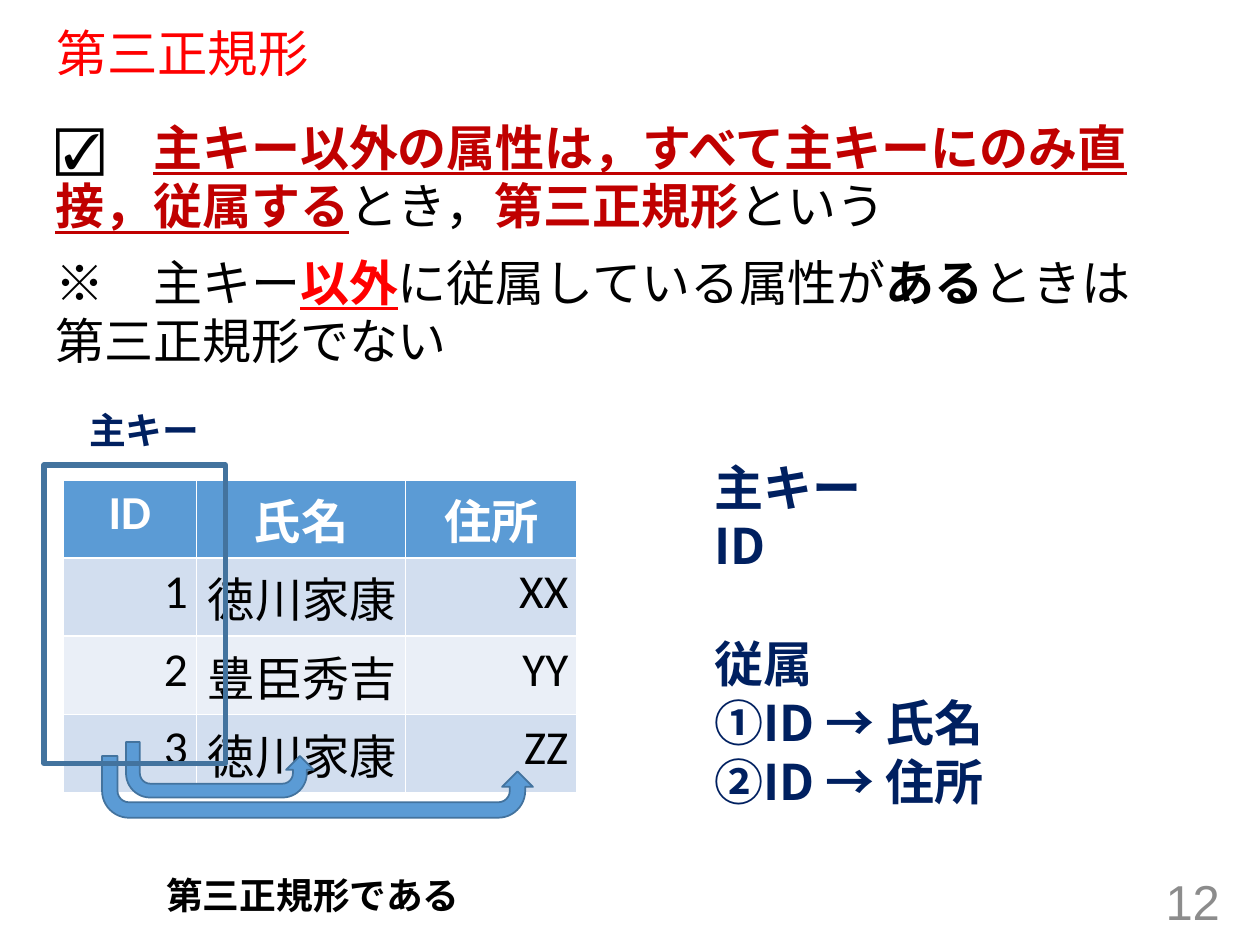
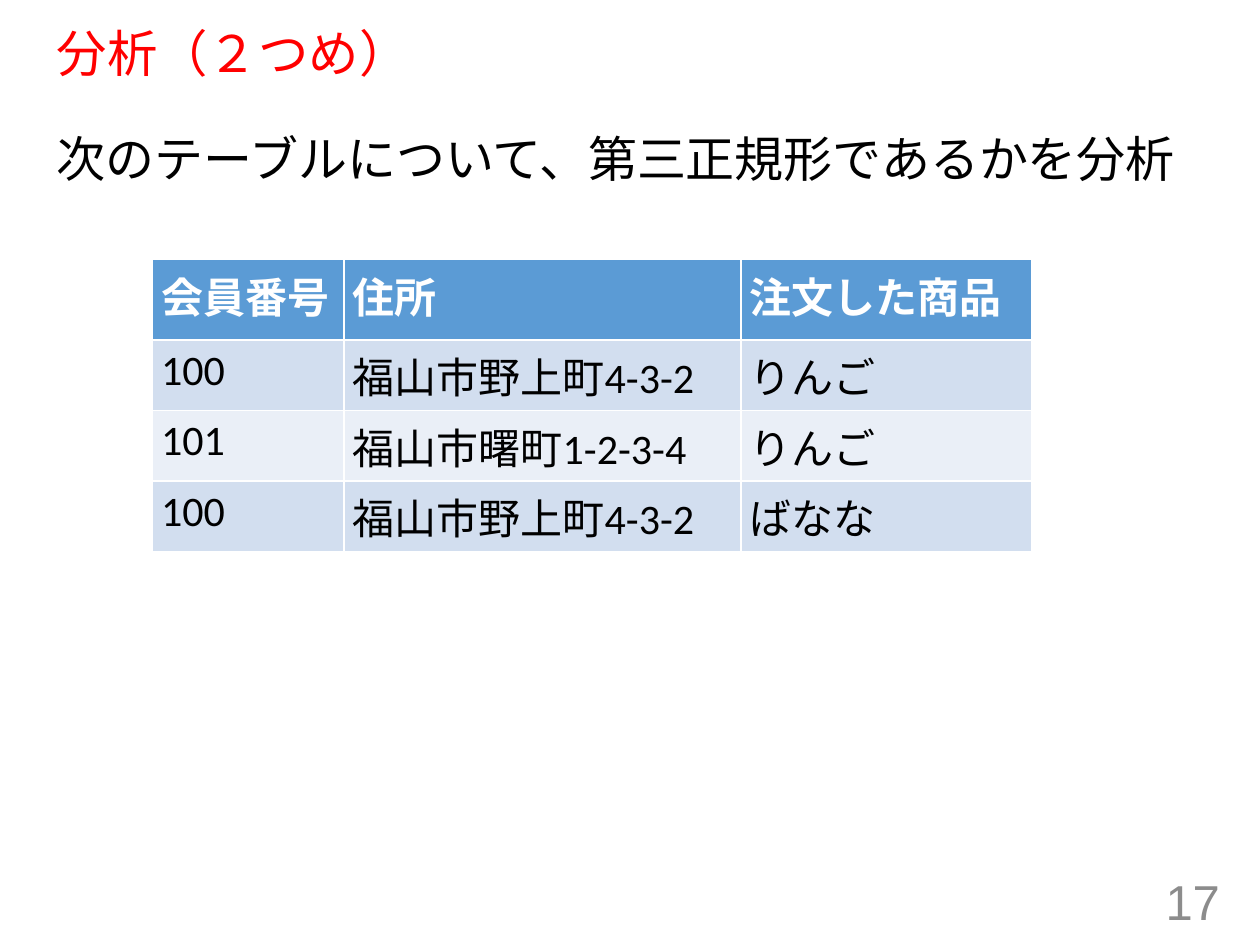
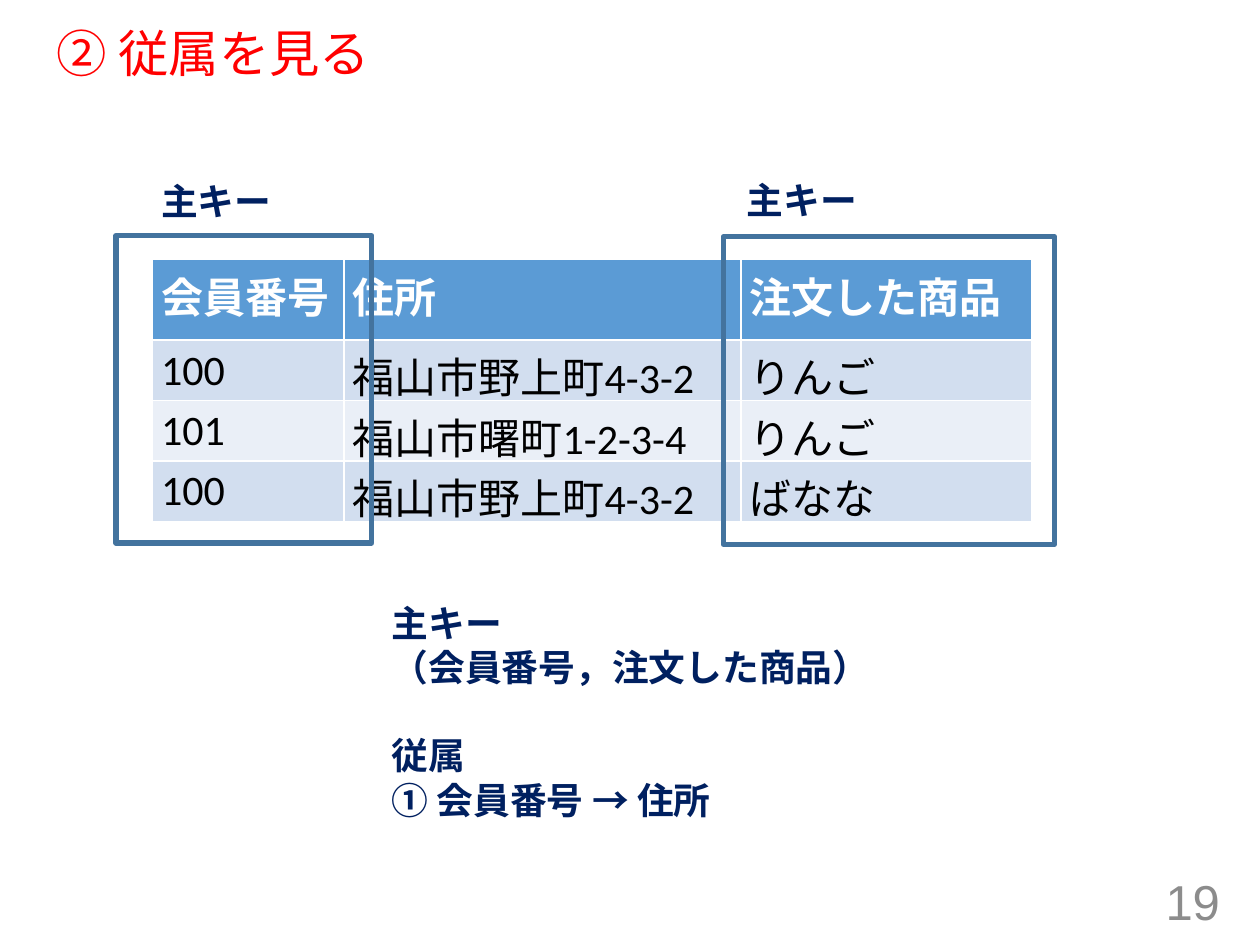
from lxml.etree import SubElement
from pptx import Presentation
from pptx.dml.color import RGBColor
from pptx.enum.lang import MSO_LANGUAGE_ID
from pptx.enum.shapes import MSO_SHAPE
from pptx.enum.text import MSO_ANCHOR, MSO_AUTO_SIZE, PP_ALIGN
from pptx.oxml.ns import qn
from pptx.util import Inches, Pt

RED = RGBColor(0xFF, 0x00, 0x00)
DARK_RED = RGBColor(0xC0, 0x00, 0x00)
NAVY = RGBColor(0x00, 0x20, 0x60)
BLACK = RGBColor(0x00, 0x00, 0x00)
WHITE = RGBColor(0xFF, 0xFF, 0xFF)
GRAY = RGBColor(0x8C, 0x8C, 0x8C)
BLUE = RGBColor(0x5B, 0x9B, 0xD5)
BLUE_LINE = RGBColor(0x43, 0x73, 0x9E)
ROW_FILLS = (RGBColor(0xD2, 0xDE, 0xEF), RGBColor(0xEA, 0xEF, 0xF7))

JP_FONT = "Noto Sans CJK JP"
LINE_RATIO = 1.2
TITLE_ONLY, TITLE_AND_BODY = 5, 1

PEOPLE = [("ID", "氏名", "住所"),
          ("1", "徳川家康", "XX"),
          ("2", "豊臣秀吉", "YY"),
          ("3", "徳川家康", "ZZ")]
ORDERS = [("会員番号", "住所", "注文した商品"),
          ("100", "福山市野上町4-3-2", "りんご"),
          ("101", "福山市曙町1-2-3-4", "りんご"),
          ("100", "福山市野上町4-3-2", "ばなな")]
ORDER_COLS = (1.52, 3.15, 2.31)


def add_run(p, text, size=28, font="Arial", color=BLACK, bold=False, underline=False):
    r = p.add_run()
    r.text = text
    f = r.font
    f.size, f.name, f.bold, f.underline = Pt(size), font, bold, underline
    f.color.rgb = color
    f.language_id = MSO_LANGUAGE_ID.JAPANESE
    SubElement(r._r.get_or_add_rPr(), qn("a:ea"), typeface=JP_FONT)


def place(s, left, top, width, height):
    s.left, s.top = Inches(left), Inches(top)
    s.width, s.height = Inches(width), Inches(height)


def add_slide(prs, layout, title, number):
    slide = prs.slides.add_slide(prs.slide_layouts[layout])
    s = slide.shapes.title
    place(s, 0.35, 0.19, 9.25, 0.51)
    tf = s.text_frame
    tf.auto_size = MSO_AUTO_SIZE.NONE
    tf.vertical_anchor = MSO_ANCHOR.MIDDLE
    p = tf.paragraphs[0]
    p.alignment, p.line_spacing = PP_ALIGN.LEFT, 0.9
    add_run(p, title, size=28.8, color=RED)
    s = slide.shapes.add_textbox(Inches(7.53), Inches(6.95), Inches(2.25), Inches(0.4))
    s.text_frame.vertical_anchor = MSO_ANCHOR.MIDDLE
    s.text_frame.word_wrap = True
    p = s.text_frame.paragraphs[0]
    p.alignment = PP_ALIGN.RIGHT
    add_run(p, number, color=GRAY)
    return slide


def fill_body(slide, box, paragraphs):
    """Each paragraph is a list of (text, format) pairs."""
    s = slide.placeholders[1]
    place(s, *box)
    tf = s.text_frame
    tf.auto_size = MSO_AUTO_SIZE.NONE
    for i, runs in enumerate(paragraphs):
        p = tf.add_paragraph() if i else tf.paragraphs[0]
        p.space_before, p.line_spacing = Pt(10), Pt(28 * LINE_RATIO)
        pPr = p._p.get_or_add_pPr()
        pPr.set("marL", "0")
        pPr.set("indent", "0")
        SubElement(pPr, qn("a:buNone"))
        for text, style in runs:
            add_run(p, text, **style)


def add_note(slide, box, *groups, size=21, color=NAVY):
    """Bold lines; groups of lines are one line height apart."""
    s = slide.shapes.add_textbox(*map(Inches, box))
    tf = s.text_frame
    tf.word_wrap = True
    pitch = Pt(size * LINE_RATIO)
    for g, lines in enumerate(groups):
        for i, line in enumerate(lines):
            p = tf.add_paragraph() if g or i else tf.paragraphs[0]
            p.line_spacing = pitch
            if g and not i:
                p.space_before = pitch
            add_run(p, line, size=size, font=JP_FONT, color=color, bold=True)


def add_data_table(slide, left, top, cols, row_heights, data, size,
                   head_align=PP_ALIGN.LEFT, align=PP_ALIGN.LEFT):
    table = slide.shapes.add_table(
        len(data), len(cols), Inches(left), Inches(top),
        Inches(sum(cols)), Inches(sum(row_heights))).table
    for column, width in zip(table.columns, cols):
        column.width = Inches(width)
    for i, values in enumerate(data):
        head = i == 0
        table.rows[i].height = Inches(row_heights[i])
        for j, value in enumerate(values):
            cell = table.cell(i, j)
            cell.margin_left = cell.margin_right = Inches(0.07)
            cell.margin_top = cell.margin_bottom = Inches(0.04)
            cell.fill.solid()
            cell.fill.fore_color.rgb = BLUE if head else ROW_FILLS[(i - 1) % 2]
            p = cell.text_frame.paragraphs[0]
            p.alignment = head_align if head else align
            add_run(p, value, size=size, font="Calibri",
                    color=WHITE if head else BLACK, bold=head)


def add_outlined(slide, kind, box, line_width):
    s = slide.shapes.add_shape(kind, *map(Inches, box))
    s.shadow.inherit = False
    s.line.color.rgb = BLUE_LINE
    s.line.width = Pt(line_width)
    return s


def add_key_frame(slide, *box):
    add_outlined(slide, MSO_SHAPE.RECTANGLE, box, 3).fill.background()


def add_dependency_arrow(slide, *box):
    s = add_outlined(slide, MSO_SHAPE.U_TURN_ARROW, box, 1)
    s.fill.solid()
    s.fill.fore_color.rgb = BLUE
    s._element.spPr.get_or_add_xfrm().set("flipV", "1")


def third_normal_form(prs):
    slide = add_slide(prs, TITLE_AND_BODY, "第三正規形", "12")
    term = dict(color=DARK_RED, bold=True)
    fill_body(slide, (0.34, 0.88, 8.77, 2.3), [
        [("☑\u3000", {}),
         ("主キー以外の属性は，すべて主キーにのみ直接，従属する", dict(term, underline=True)),
         ("とき，", {}), ("第三正規形", term), ("という", {})],
        [("※\u3000主キー", {}), ("以外", dict(color=RED, bold=True, underline=True)),
         ("に従属している属性が", {}), ("ある", dict(bold=True)),
         ("ときは 第三正規形でない", {})]])
    add_data_table(slide, 0.5, 3.81, (1.06, 1.66, 1.36), [0.62] * 4, PEOPLE, 27,
                   PP_ALIGN.CENTER, PP_ALIGN.RIGHT)
    add_dependency_arrow(slide, 1, 5.89, 1.49, 0.44)
    add_dependency_arrow(slide, 0.81, 6, 3.42, 0.49)
    add_note(slide, (1.22, 6.88, 2.6, 0.45), ["第三正規形である"], color=BLACK)
    add_key_frame(slide, 0.35, 3.69, 1.44, 2.37)
    add_note(slide, (0.61, 3.19, 1.15, 0.45), ["主キー"])
    add_note(slide, (5.57, 3.58, 2.7, 2.93), ["主キー", "ID"],
             ["従属", "①ID → 氏名", "②ID → 住所"], size=28)


def analysis(prs):
    slide = add_slide(prs, TITLE_AND_BODY, "分析（２つめ）", "17")
    fill_body(slide, (0.35, 0.97, 9.25, 1),
              [[("次のテーブルについて、第三正規形であるかを分析", {})]])
    add_data_table(slide, 1.21, 2.06, ORDER_COLS, [0.64] + [0.56] * 3, ORDERS, 24)


def dependencies(prs):
    slide = add_slide(prs, TITLE_ONLY, "② 従属を見る", "19")
    add_note(slide, (3.01, 4.72, 4.11, 1.87), ["主キー", "（会員番号，注文した商品）"],
             ["従属", "① 会員番号 → 住所"])
    add_data_table(slide, 1.21, 2.06, ORDER_COLS, [0.64] + [0.47] * 3, ORDERS, 24)
    add_key_frame(slide, 0.92, 1.87, 2.03, 2.44)
    add_note(slide, (1.18, 1.37, 2.75, 0.47), ["主キー"])
    add_key_frame(slide, 5.74, 1.88, 2.63, 2.44)
    add_note(slide, (5.83, 1.36, 2.75, 0.47), ["主キー"])


def main():
    prs = Presentation()
    prs.slide_width, prs.slide_height = Inches(10), Inches(7.5)
    third_normal_form(prs)
    analysis(prs)
    dependencies(prs)
    prs.save("out.pptx")


if __name__ == "__main__":
    main()
